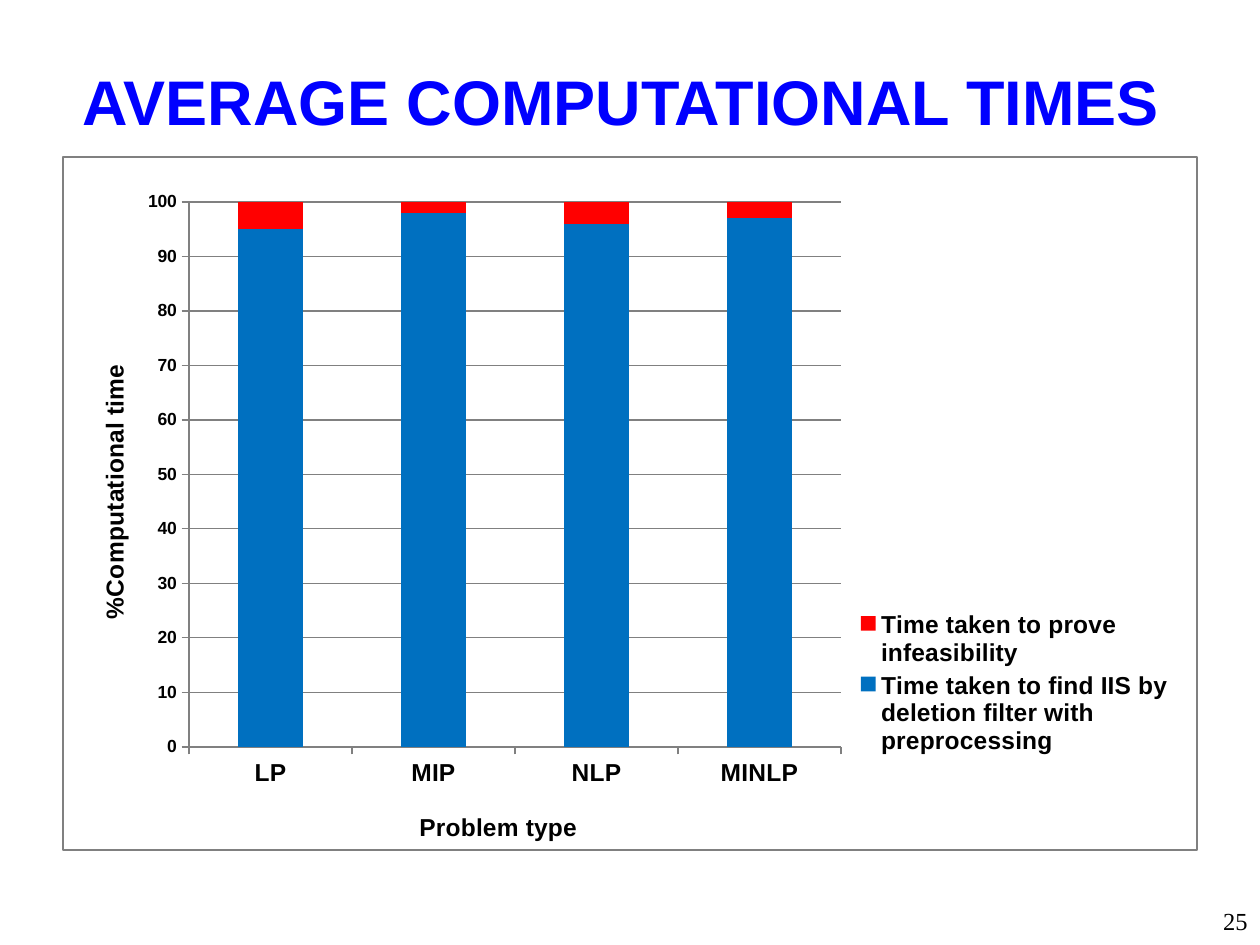
"""Build a slide with a stacked column chart of average computational times."""
from lxml import etree
from pptx import Presentation
from pptx.chart.data import CategoryChartData
from pptx.dml.color import RGBColor
from pptx.enum.chart import XL_CHART_TYPE, XL_LEGEND_POSITION, XL_TICK_MARK
from pptx.enum.shapes import MSO_SHAPE
from pptx.enum.text import MSO_ANCHOR, PP_ALIGN
from pptx.oxml.ns import qn
from pptx.util import Pt

STACKED = XL_CHART_TYPE.COLUMN_STACKED
LEGEND_RIGHT = XL_LEGEND_POSITION.RIGHT
TICK_OUTSIDE, TICK_NONE = XL_TICK_MARK.OUTSIDE, XL_TICK_MARK.NONE
RECTANGLE = MSO_SHAPE.RECTANGLE
MIDDLE = MSO_ANCHOR.MIDDLE
CENTER, RIGHT = PP_ALIGN.CENTER, PP_ALIGN.RIGHT

TITLE = "AVERAGE COMPUTATIONAL TIMES "
PAGE_NUMBER = "25"
CATEGORIES = ["LP", "MIP", "NLP", "MINLP"]
SERIES = [
    ("Time taken to find IIS by deletion filter with preprocessing", [95, 98, 96, 97], "find"),
    ("Time taken to prove infeasibility", [5, 2, 4, 3], "prove"),
]
CATEGORY_TITLE, VALUE_TITLE = "Problem type", "%Computational time"

THEME = {
    "title": {"name": "Arial", "size": 36, "bold": True, "color": "0000FF"},
    "number": {"name": "Times New Roman", "size": 14, "bold": False, "color": "000000"},
    "label": {"name": "Arial", "size": 14, "bold": True, "color": "000000"},
    "tick": {"name": "Arial", "size": 10, "bold": True, "color": "000000"},
    "line": "808080",
    "find": "0070C0",
    "prove": "FF0000",
}

PX_PER_INCH = 126
PAGE = (1260, 945)
TITLE_BOX = (0, 32, 1260, 136)
NUMBER_BOX = (1134, 903, 126, 42)
FRAME_BOX = (63, 157, 1134, 693)
CHART_BOX = (63, 179, 1134, 683)
PLOT_BOX = (189, 202, 652, 545)
LEGEND_BOX = (852, 606, 325, 154)
CATEGORY_TITLE_AT = (415, 807)
VALUE_TITLE_AT = (94, 360)


def emu(*lengths):
    return [round(length * 914400 / PX_PER_INCH) for length in lengths]


def style_font(font, style):
    values = {"name": style["name"], "size": Pt(style["size"]), "bold": style["bold"]}
    for key, value in values.items():
        setattr(font, key, value)
    font.color.rgb = RGBColor.from_string(style["color"])


def style_line(line):
    line.color.rgb = RGBColor.from_string(THEME["line"])
    line.width = Pt(0.75)


def write(frame, text, style, align):
    para = frame.paragraphs[0]
    para.alignment = align
    span = para.add_run()
    span.text = text
    style_font(span.font, style)
    return para


def place(element, index, box, inner=False):
    """Give a chart part a manual layout from its page position."""
    for old in element.findall(qn("c:layout")):
        element.remove(old)
    layout = etree.Element(qn("c:layout"))
    manual = etree.SubElement(layout, qn("c:manualLayout"))
    left, top, width, height = CHART_BOX
    fractions = [(box[0] - left) / width, (box[1] - top) / height]
    if len(box) == 4:
        fractions += [box[2] / width, box[3] / height]
    settings = [("layoutTarget", "inner")] if inner else []
    settings += [("xMode", "edge"), ("yMode", "edge")]
    settings += [(name, f"{value:.4f}") for name, value in zip("xywh", fractions)]
    for name, value in settings:
        etree.SubElement(manual, qn(f"c:{name}")).set("val", value)
    element.insert(index, layout)


def style_axis(axis, title, title_at, tick_style):
    axis.major_tick_mark = TICK_OUTSIDE
    axis.minor_tick_mark = TICK_NONE
    style_font(axis.tick_labels.font, tick_style)
    style_line(axis.format.line)
    write(axis.axis_title.text_frame, title, THEME["label"], CENTER)
    place(axis.axis_title._element, 1, title_at)


def add_times_chart(page):
    data = CategoryChartData()
    data.categories = CATEGORIES
    for name, values, _ in SERIES:
        data.add_series(name, values)
    chart = page.shapes.add_chart(STACKED, *emu(*CHART_BOX), data).chart
    chart.has_title = False
    style_font(chart.font, THEME["tick"])

    plot = chart.plots[0]
    plot.gap_width, plot.overlap, plot.vary_by_categories = 150, 100, False
    for series, (_, _, color) in zip(plot.series, SERIES):
        series.format.fill.solid()
        series.format.fill.fore_color.rgb = RGBColor.from_string(THEME[color])

    style_axis(chart.category_axis, CATEGORY_TITLE, CATEGORY_TITLE_AT, THEME["label"])
    axis = chart.value_axis
    style_axis(axis, VALUE_TITLE, VALUE_TITLE_AT, THEME["tick"])
    axis.minimum_scale, axis.maximum_scale, axis.major_unit = 0, 100, 10
    axis.has_major_gridlines = True
    style_line(axis.major_gridlines.format.line)

    chart.has_legend = True
    legend = chart.legend
    legend.position = LEGEND_RIGHT
    legend.include_in_layout = False
    style_font(legend.font, THEME["label"])
    place(legend._element, 1, LEGEND_BOX)
    place(chart._chartSpace.chart.plotArea, 0, PLOT_BOX, inner=True)


def main():
    deck = Presentation()
    deck.slide_width, deck.slide_height = emu(*PAGE)
    page = deck.slides.add_slide(deck.slide_layouts[5])

    title = page.shapes.title
    title.left, title.top, title.width, title.height = emu(*TITLE_BOX)
    title.text_frame.vertical_anchor = MIDDLE
    write(title.text_frame, TITLE, THEME["title"], CENTER)

    number = page.shapes.add_textbox(*emu(*NUMBER_BOX))
    number.text_frame.word_wrap = True
    write(number.text_frame, PAGE_NUMBER, THEME["number"], RIGHT).line_spacing = 0.9

    add_times_chart(page)

    frame = page.shapes.add_shape(RECTANGLE, *emu(*FRAME_BOX))
    frame.shadow.inherit = False
    frame.fill.background()
    style_line(frame.line)

    deck.save("out.pptx")


if __name__ == "__main__":
    main()
